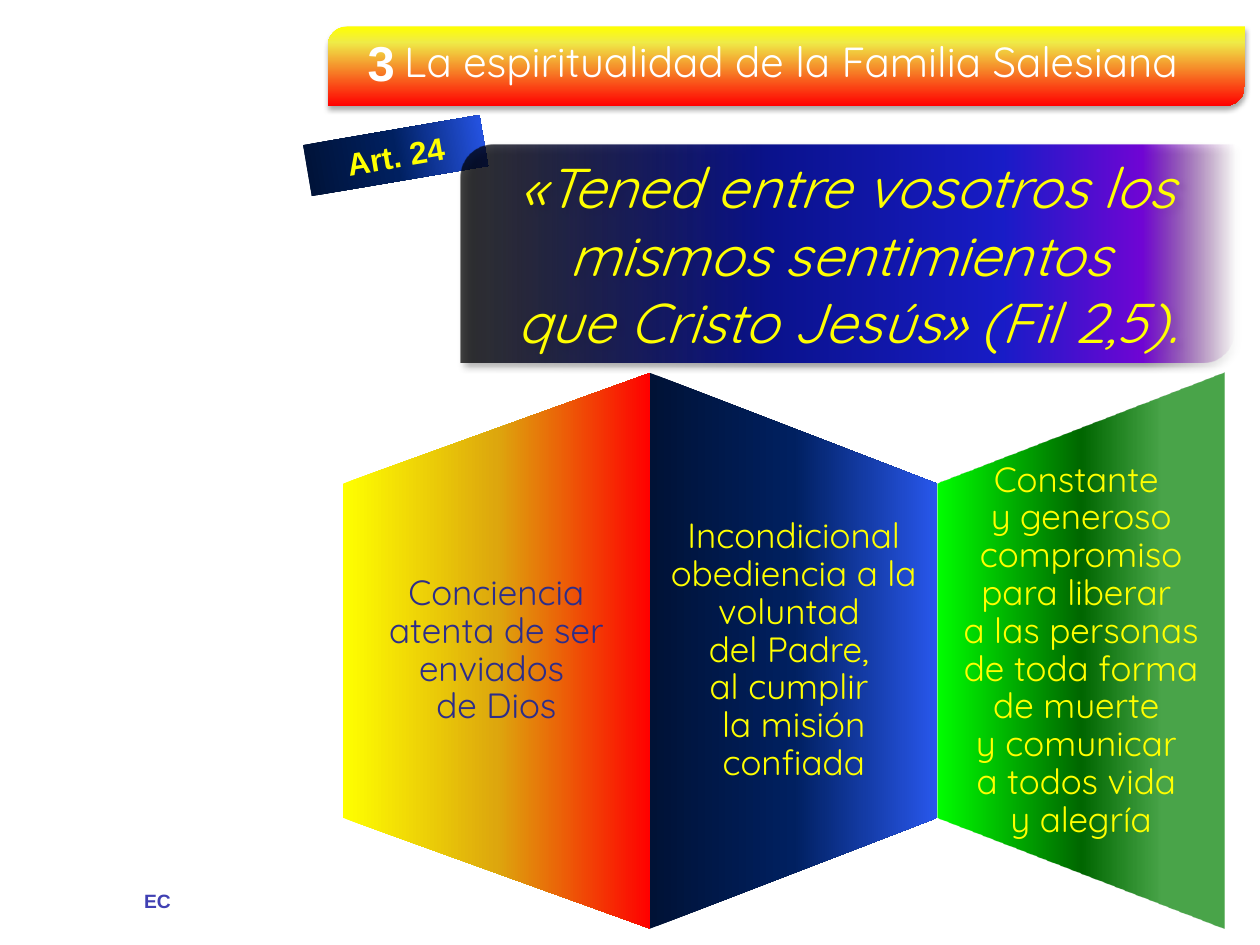
from lxml.etree import SubElement
from pptx import Presentation
from pptx.dml.color import RGBColor
from pptx.enum.shapes import MSO_SHAPE
from pptx.enum.text import MSO_ANCHOR, PP_ALIGN
from pptx.oxml.ns import qn
from pptx.util import Inches, Pt

YELLOW = RGBColor(0xFF, 0xFF, 0x00)
RED = RGBColor(0xFF, 0x00, 0x00)
LEMON = RGBColor(0xEF, 0xEB, 0x47)
GOLD = RGBColor(0xDD, 0xA7, 0x0D)
NIGHT = RGBColor(0x00, 0x12, 0x36)
NAVY = RGBColor(0x00, 0x20, 0x60)
BLUE = RGBColor(0x28, 0x57, 0xEC)
ROYAL = RGBColor(0x0A, 0x12, 0x8C)
COBALT = RGBColor(0x18, 0x1C, 0xC7)
VIOLET = RGBColor(0x70, 0x05, 0xD4)
MAUVE = RGBColor(0x8C, 0x3D, 0x91)
LIME = RGBColor(0x00, 0xFF, 0x00)
FOREST = RGBColor(0x00, 0x66, 0x00)
GREEN = RGBColor(0x00, 0x80, 0x00)
INDIGO = RGBColor(0x2D, 0x2D, 0x8A)
INITIALS = RGBColor(0x40, 0x40, 0xB3)
BLACK = RGBColor(0x00, 0x00, 0x00)
WHITE = RGBColor(0xFF, 0xFF, 0xFF)
BLUES = [(0, NIGHT), (50, NAVY), (100, BLUE)]


def write(sp, text, size, color, font="Quicksand", bold=False, italic=False,
          align=PP_ALIGN.CENTER, anchor=MSO_ANCHOR.MIDDLE, spacing=None,
          wrap=True, margin=None, shadow=False):
    tf = sp.text_frame
    tf.word_wrap = wrap
    tf.vertical_anchor = anchor
    if margin:
        tf.margin_left = tf.margin_right = Inches(0.11)
        tf.margin_top = tf.margin_bottom = Inches(margin)
    tf.text = text
    for p in tf.paragraphs:
        p.alignment = align
        p.line_spacing = spacing
        r = p.runs[0]
        r.font.size = Pt(size)
        r.font.bold = bold
        r.font.italic = italic
        r.font.color.rgb = color
        if shadow:
            cast(SubElement(r.font._element, qn("a:effectLst")), 60, 3, 3, 45)
        r.font.name = font


def cast(effects, alpha, blur, dist, angle):
    shadow = SubElement(effects, qn("a:outerShdw"), blurRad=str(Pt(blur)),
                        dist=str(Pt(dist)), dir=str(angle * 60000),
                        algn="tl", rotWithShape="0")
    clr = SubElement(shadow, qn("a:srgbClr"), val=str(BLACK))
    SubElement(clr, qn("a:alpha"), val=str(alpha * 1000))


prs = Presentation()
prs.slide_width, prs.slide_height = Inches(10), Inches(7.5)
s = prs.slides.add_slide(prs.slide_layouts[6])

initials = s.shapes.add_textbox(Inches(1.04), Inches(7.01), Inches(0.42), Inches(0.29))
write(initials, "EC", 11, INITIALS, font="Arial", bold=True, wrap=False,
      anchor=MSO_ANCHOR.TOP)

tag = s.shapes.add_shape(MSO_SHAPE.RECTANGLE, Inches(2.43), Inches(1.03),
                         Inches(1.42), Inches(0.41))
tag.rotation = 350.3
write(tag, "Art. 24", 18, YELLOW, font="Arial", bold=True)

header = s.shapes.add_group_shape().shapes
banner = header.add_shape(MSO_SHAPE.ROUND_2_DIAG_RECTANGLE, Inches(2.6), Inches(0.21),
                          Inches(7.28), Inches(0.63))
banner.adjustments[0] = 0.25
number = header.add_textbox(Inches(2.79), Inches(0.21), Inches(0.47), Inches(0.57))
write(number, "3", 28, WHITE, font="Arial", bold=True, anchor=MSO_ANCHOR.TOP, shadow=True)
title = header.add_textbox(Inches(3.11), Inches(0.23), Inches(6.69), Inches(0.5))
write(title, "La espiritualidad de la Familia Salesiana", 24, WHITE,
      align=PP_ALIGN.LEFT, anchor=MSO_ANCHOR.TOP, shadow=True)

quote = s.shapes.add_shape(MSO_SHAPE.ROUND_2_DIAG_RECTANGLE, Inches(3.66), Inches(1.15),
                           Inches(6.14), Inches(1.73))
quote.adjustments[0] = 0.15
write(quote, "«Tened entre vosotros los mismos sentimientos \nque Cristo Jesús» (Fil 2,5).",
      32, YELLOW, italic=True)

filled = [
    (tag, BLUES, 0),
    (banner, [(0, YELLOW), (20, LEMON), (100, RED)], 270),
    (quote, [(0, BLACK, 73), (40, ROYAL), (70, COBALT), (88, VIOLET), (100, MAUVE, 0)], 0),
]

panels = [
    (5.16, 7.44, BLUES, YELLOW,
     "Incondicional obediencia a la voluntad \ndel Padre, \nal cumplir \nla misión confiada"),
    (9.72, 7.44, [(0, LIME), (50, FOREST), (78, GREEN, 71)], YELLOW,
     "Constante \ny generoso compromiso para liberar \n"
     "a las personas de toda forma de muerte \ny comunicar \na todos vida \ny alegría"),
    (5.16, 2.72, [(0, YELLOW), (50, GOLD), (100, RED)], INDIGO,
     "Conciencia atenta de ser enviados \nde Dios"),
]
for tall, short, stops, color, text in panels:
    fb = s.shapes.build_freeform(Inches(tall), Inches(7.37))
    fb.add_line_segments([(Inches(x), Inches(y)) for x, y in
                          ((tall, 2.96), (short, 3.84), (short, 6.49))])
    panel = fb.convert_to_shape()
    write(panel, text, 20, color, spacing=0.9, margin=0.9)
    filled.append((panel, stops, 0))

for sp, stops, angle in filled:
    sp.fill.gradient()
    sp.fill.gradient_angle = angle
    gs_list = sp.element.spPr.find(qn("a:gradFill")).find(qn("a:gsLst"))
    gs_list.clear()
    for pos, color, *alpha in stops:
        gs = SubElement(gs_list, qn("a:gs"), pos=str(pos * 1000))
        clr = SubElement(gs, qn("a:srgbClr"), val=str(color))
        for value in alpha:
            SubElement(clr, qn("a:alpha"), val=str(value * 1000))
    sp.line.fill.background()
    sp.shadow.inherit = False

for sp, look in ((banner, (35, 3.1, 1.8, 90)), (quote, (40, 4, 3, 45))):
    cast(sp.element.spPr.find(qn("a:effectLst")), *look)

prs.save("out.pptx")
